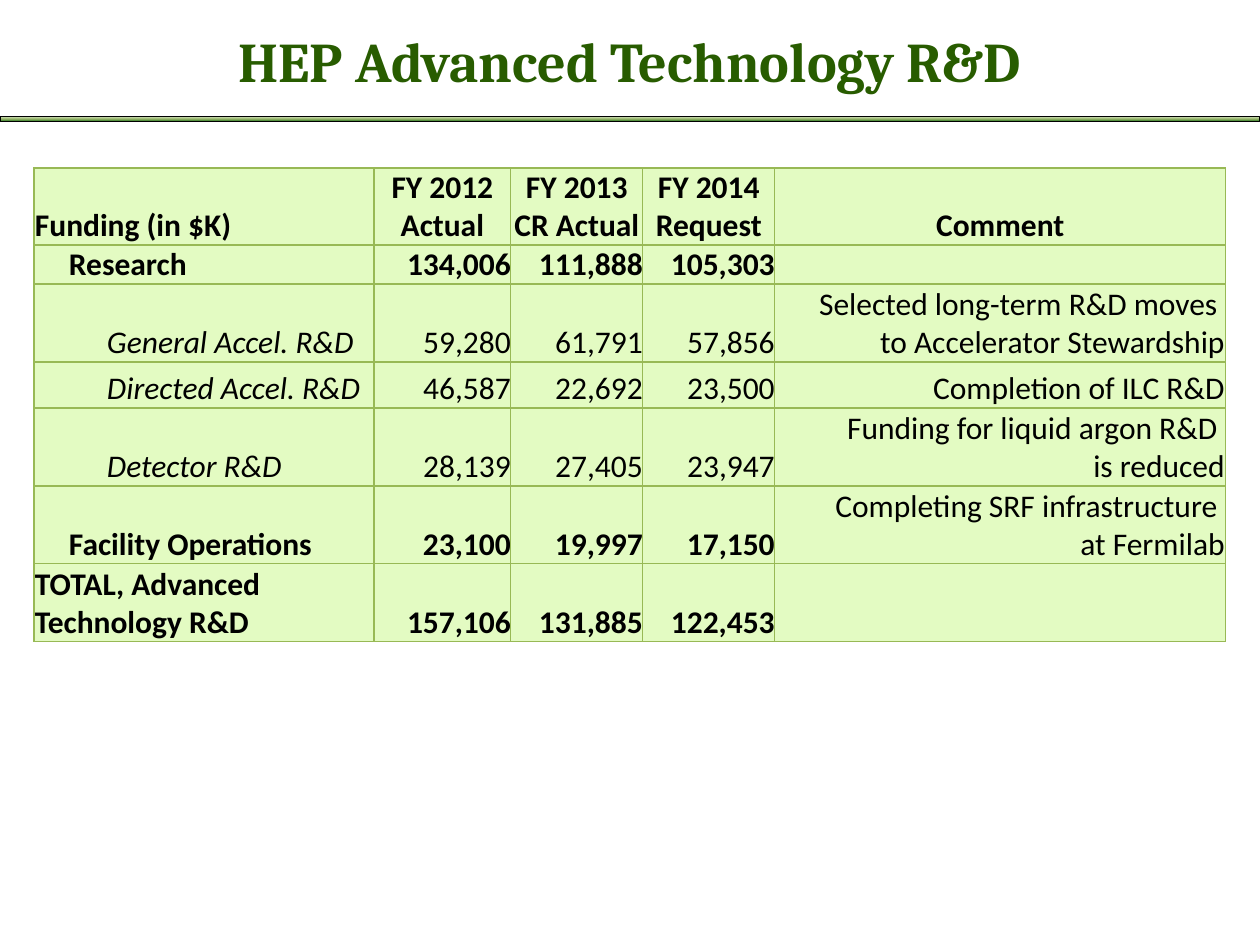
import copy

import pptx
import pptx.dml.color
import pptx.enum.text
import pptx.oxml
import pptx.oxml.ns
import pptx.util

ALIGN = pptx.enum.text.PP_ALIGN
ANCHOR = pptx.enum.text.MSO_ANCHOR
PX = 914400 // 126

TITLE = "HEP Advanced Technology R&D"
HEADER = ["Funding (in $K)", "FY 2012 Actual", "FY 2013 CR Actual",
          "FY 2014 Request", "Comment"]
# Row kind, label, three yearly amounts, comment
FUNDING = [
    ("group", "Research", "134,006", "111,888", "105,303", ""),
    ("item", "General Accel. R&D", "59,280", "61,791", "57,856",
     "Selected long-term R&D moves \nto Accelerator Stewardship"),
    ("item", "Directed Accel. R&D", "46,587", "22,692", "23,500",
     "Completion of ILC R&D"),
    ("item", "Detector R&D", "28,139", "27,405", "23,947",
     "Funding for liquid argon R&D \nis reduced"),
    ("group", "Facility Operations", "23,100", "19,997", "17,150",
     "Completing SRF infrastructure \nat Fermilab"),
    ("total", "TOTAL, Advanced\nTechnology R&D", "157,106", "131,885", "122,453", ""),
]
COLUMN_WIDTHS = [340, 137, 132, 132, 451]
ROW_HEIGHTS = [77, 39, 78, 46, 78, 78, 78]
TABLE_LEFT, TABLE_TOP = 34, 168
LABEL_INSET, ITEM_INDENT = 35, 38
BAR_STOPS = [(0, "DDEBCF"), (0.5, "9CB86E"), (1, "156B13")]
TITLE_GREEN, CELL_GREEN, BORDER_GREEN, BLACK = "285C00", "E3FBC2", "98B955", "000000"


def px(length):
    return pptx.util.Emu(length * PX)


def color(code):
    return pptx.dml.color.RGBColor.from_string(code)


def style_text(paragraph, font, size, code, bold=False, italic=False):
    for span in paragraph.runs:
        span.font.name = font
        span.font.size = pptx.util.Pt(size)
        span.font.color.rgb = color(code)
        span.font.bold = bold
        span.font.italic = italic


def add_title(page):
    box = page.shapes.add_textbox(0, px(24), px(1260), px(73))
    frame = box.text_frame
    frame.word_wrap = True
    frame.vertical_anchor = ANCHOR.MIDDLE
    frame.text = TITLE
    frame.paragraphs[0].alignment = ALIGN.CENTER
    style_text(frame.paragraphs[0], "Cambria", 32, TITLE_GREEN, bold=True)


def add_bar(page):
    bar = page.shapes.add_shape(pptx.enum.shapes.MSO_SHAPE.RECTANGLE,
                                0, px(116), px(1260), px(6))
    bar.shadow.inherit = False
    bar.line.color.rgb = color(BLACK)
    bar.line.width = pptx.util.Pt(0.5)
    bar.fill.gradient()
    bar.fill.gradient_angle = 270
    stop_list = bar._element.spPr.find(".//" + pptx.oxml.ns.qn("a:gsLst"))
    stop_list.append(copy.deepcopy(stop_list[0]))
    for stop, (position, code) in zip(bar.fill.gradient_stops, BAR_STOPS):
        stop.position = position
        stop.color.rgb = color(code)


def add_borders(cell):
    properties = cell._tc.get_or_add_tcPr()
    for side in ("lnL", "lnR", "lnT", "lnB"):
        properties.append(pptx.oxml.parse_xml(
            f'<a:{side} {pptx.oxml.ns.nsdecls("a")} w="9525"><a:solidFill>'
            f'<a:srgbClr val="{BORDER_GREEN}"/></a:solidFill></a:{side}>'))


def fill_cell(cell, kind, column, text):
    is_label, is_comment = column == 0, column == len(HEADER) - 1
    inset = px(1) if is_label or is_comment else 0
    indented = is_label and kind in ("group", "item")
    cell.margin_left = px(LABEL_INSET) if indented else inset
    cell.margin_right = cell.margin_top = inset
    cell.margin_bottom = 0
    cell.vertical_anchor = ANCHOR.BOTTOM
    add_borders(cell)
    cell.fill.solid()
    cell.fill.fore_color.rgb = color(CELL_GREEN)

    cell.text_frame.text = text
    for para in cell.text_frame.paragraphs:
        if is_label:
            para.alignment = ALIGN.LEFT
        else:
            para.alignment = ALIGN.CENTER if kind == "header" else ALIGN.RIGHT
        if is_label and kind == "item":
            para.level = 1
            properties = para._p.get_or_add_pPr()
            properties.set("marL", str(px(ITEM_INDENT)))
            properties.set("indent", "0")
        bold = kind == "header" or (kind != "item" and not is_comment)
        style_text(para, "Calibri", 18, BLACK, bold, is_label and kind == "item")


def add_funding_table(page):
    rows = [("header", *HEADER), *FUNDING]
    table = page.shapes.add_table(
        len(rows), len(HEADER), px(TABLE_LEFT), px(TABLE_TOP),
        px(sum(COLUMN_WIDTHS)), px(sum(ROW_HEIGHTS))).table
    for column, width in zip(table.columns, COLUMN_WIDTHS):
        column.width = px(width)
    for row, height in zip(table.rows, ROW_HEIGHTS):
        row.height = px(height)
    for row, (kind, *texts) in zip(table.rows, rows):
        for column, text in enumerate(texts):
            fill_cell(row.cells[column], kind, column, text)


def main():
    deck = pptx.Presentation()
    deck.slide_width, deck.slide_height = px(1260), px(945)
    page = deck.slides.add_slide(deck.slide_layouts[6])
    add_title(page)
    add_funding_table(page)
    add_bar(page)
    deck.save("out.pptx")


if __name__ == "__main__":
    import pptx.enum.shapes
    main()
